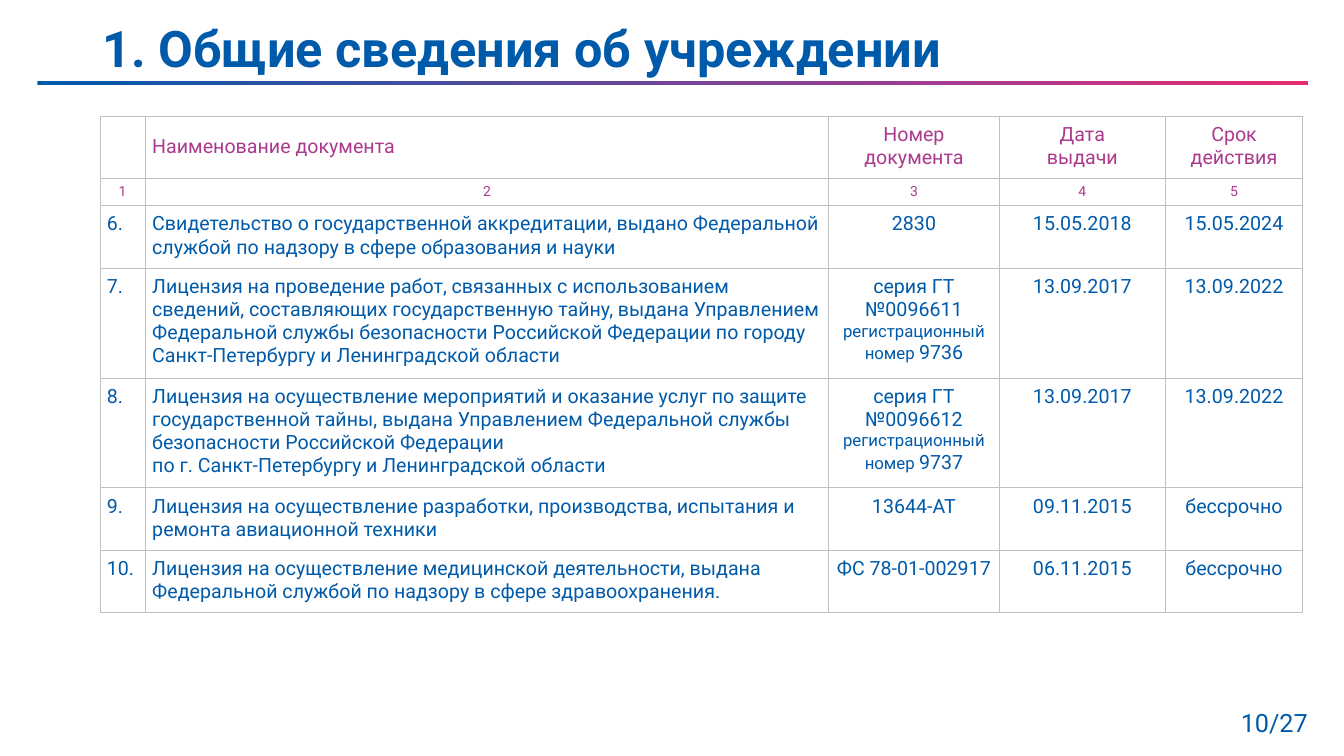
from copy import deepcopy

from pptx import Presentation, dml, util as u
from pptx.dml import color
from pptx.enum import shapes, text
from pptx.oxml import parse_xml
from pptx.oxml.ns import nsdecls, qn

COLORS = {"blue": "005AAA", "violet": "AB3A8D", "pink": "E72B70", "border": "BFBFBF"}
FONT = "Roboto"
LEFT, CENTER, RIGHT = text.PP_ALIGN.LEFT, text.PP_ALIGN.CENTER, text.PP_ALIGN.RIGHT
TOP, MIDDLE = text.MSO_ANCHOR.TOP, text.MSO_ANCHOR.MIDDLE

COLUMN_WIDTHS = [0.45, 6.78, 1.69, 1.65, 1.36]
ROW_HEIGHTS = [0.62, 0.27, 0.62, 1.09, 1.09, 0.62, 0.62]
HEADINGS = ["", "Наименование документа", "Номер\nдокумента", "Дата\nвыдачи", "Срок\nдействия"]


def license_number(series, registration):
    """Return paragraphs of sized spans for a licence with a registration number."""
    return [
        [("серия ГТ", 14)],
        [(f"№{series} ", 14), ("регистрационный номер ", 12), (registration, 14)],
    ]


DOCUMENTS = [
    ["6.", "Свидетельство о государственной аккредитации, выдано Федеральной "
     "службой по надзору в сфере образования и науки",
     "2830", "15.05.2018", "15.05.2024"],
    ["7.", "Лицензия на проведение работ, связанных с использованием сведений, "
     "составляющих государственную тайну, выдана Управлением Федеральной службы "
     "безопасности Российской Федерации по городу Санкт-Петербургу и Ленинградской области",
     license_number("0096611", "9736"), "13.09.2017", "13.09.2022"],
    ["8.", "Лицензия на осуществление мероприятий и оказание услуг по защите "
     "государственной тайны, выдана Управлением Федеральной службы безопасности "
     "Российской Федерации \nпо г. Санкт-Петербургу и Ленинградской области",
     license_number("0096612", "9737"), "13.09.2017", "13.09.2022"],
    ["9.", "Лицензия на осуществление разработки, производства, испытания и "
     "ремонта авиационной техники",
     "13644-АТ", "09.11.2015", "бессрочно"],
    ["10.", "Лицензия на осуществление медицинской деятельности, выдана "
     "Федеральной службой по надзору в сфере здравоохранения.",
     "ФС 78-01-002917", "06.11.2015", "бессрочно"],
]


def write_text(frame, content, size=14, hue="blue", bold=False, align=LEFT, spacing=None):
    """Write a string, or paragraphs of (text, size) spans, into a text frame."""
    paragraphs = [[(content, size)]] if isinstance(content, str) else content
    for index, spans in enumerate(paragraphs):
        para = frame.add_paragraph() if index else frame.paragraphs[0]
        para.alignment = align
        if spacing:
            para.line_spacing = spacing
        for words, points in spans:
            for number, line in enumerate(words.split("\n")):
                if number:
                    para.add_line_break()
                span = para.add_run()
                span.text = line
                span.font.name = FONT
                span.font.size = u.Pt(points)
                span.font.bold = bold
                span.font.color.rgb = color.RGBColor.from_string(COLORS[hue])


def add_label(page, box, content, anchor=TOP, **style):
    """Place a wrapped text box in the given box."""
    frame = page.shapes.add_textbox(*map(u.Inches, box)).text_frame
    frame.word_wrap = True
    frame.vertical_anchor = anchor
    write_text(frame, content, **style)


def add_rule(page, box):
    """Draw the gradient rule under the title."""
    rule = page.shapes.add_shape(shapes.MSO_SHAPE.RECTANGLE, *map(u.Inches, box))
    rule.shadow.inherit = False
    rule.line.fill.background()
    rule.fill.gradient()
    rule.fill.gradient_angle = 0
    stop_list = next(rule.element.iter(qn("a:gsLst")))
    stop_list.append(deepcopy(stop_list[0]))
    stops = zip(rule.fill.gradient_stops, [0, 0.75, 1], ["blue", "violet", "pink"])
    for stop, position, hue in stops:
        stop.position = position
        stop.color.rgb = color.RGBColor.from_string(COLORS[hue])


def add_borders(cell):
    """Give a cell thin grey borders on all sides."""
    properties = cell._tc.get_or_add_tcPr()
    for side in ("lnL", "lnR", "lnT", "lnB"):
        properties.append(parse_xml(
            f'<a:{side} {nsdecls("a")} w="{u.Pt(0.5)}"><a:solidFill>'
            f'<a:srgbClr val="{COLORS["border"]}"/></a:solidFill></a:{side}>'))


def fill_cell(cell, content, inset=0.07, anchor=TOP, **style):
    """Format one table cell and write its content."""
    add_borders(cell)
    cell.fill.background()
    cell.margin_left = cell.margin_right = u.Inches(inset)
    cell.margin_top = cell.margin_bottom = u.Inches(inset)
    cell.vertical_anchor = anchor
    write_text(cell.text_frame, content, **style)


def add_documents(page, box):
    """Build the table of documents in the given box."""
    table = page.shapes.add_table(
        len(ROW_HEIGHTS), len(COLUMN_WIDTHS), *map(u.Inches, box)).table
    table.first_row = table.horz_banding = False
    for column, width in zip(table.columns, COLUMN_WIDTHS):
        column.width = u.Inches(width)
    for row, height in zip(table.rows, ROW_HEIGHTS):
        row.height = u.Inches(height)
    for column, heading in enumerate(HEADINGS):
        align = CENTER if column > 1 else LEFT
        fill_cell(table.cell(0, column), heading, hue="violet", align=align,
                  anchor=MIDDLE if column == 1 else TOP)
        fill_cell(table.cell(1, column), str(column + 1), inset=0.05, size=10,
                  hue="violet", align=CENTER)
        for row, document in enumerate(DOCUMENTS, start=2):
            fill_cell(table.cell(row, column), document[column], align=align)


def build_page(page, box):
    """Place the title, rule, table and page number relative to the slide box."""
    left, top, width, height = box
    add_rule(page, (left + 0.37, top + 0.8, 12.6, 0.04))
    add_label(page, (left + width - 1.16, top + height - 0.53, 0.9, 0.4), "10/27",
              size=18, align=RIGHT)
    add_label(page, (left + 0.92, top + 0.1, 11.5, 0.82), "1. Общие сведения об учреждении",
              anchor=MIDDLE, size=36, bold=True, spacing=0.9)
    add_documents(page, (left + 0.99, top + 1.15, sum(COLUMN_WIDTHS), sum(ROW_HEIGHTS)))


def main():
    """Build and save the deck."""
    deck = Presentation()
    deck.slide_width, deck.slide_height = u.Inches(13.33), u.Inches(7.5)
    page = deck.slides.add_slide(deck.slide_layouts[6])
    build_page(page, (0, 0, 13.33, 7.5))
    deck.save("out.pptx")


if __name__ == "__main__":
    main()
